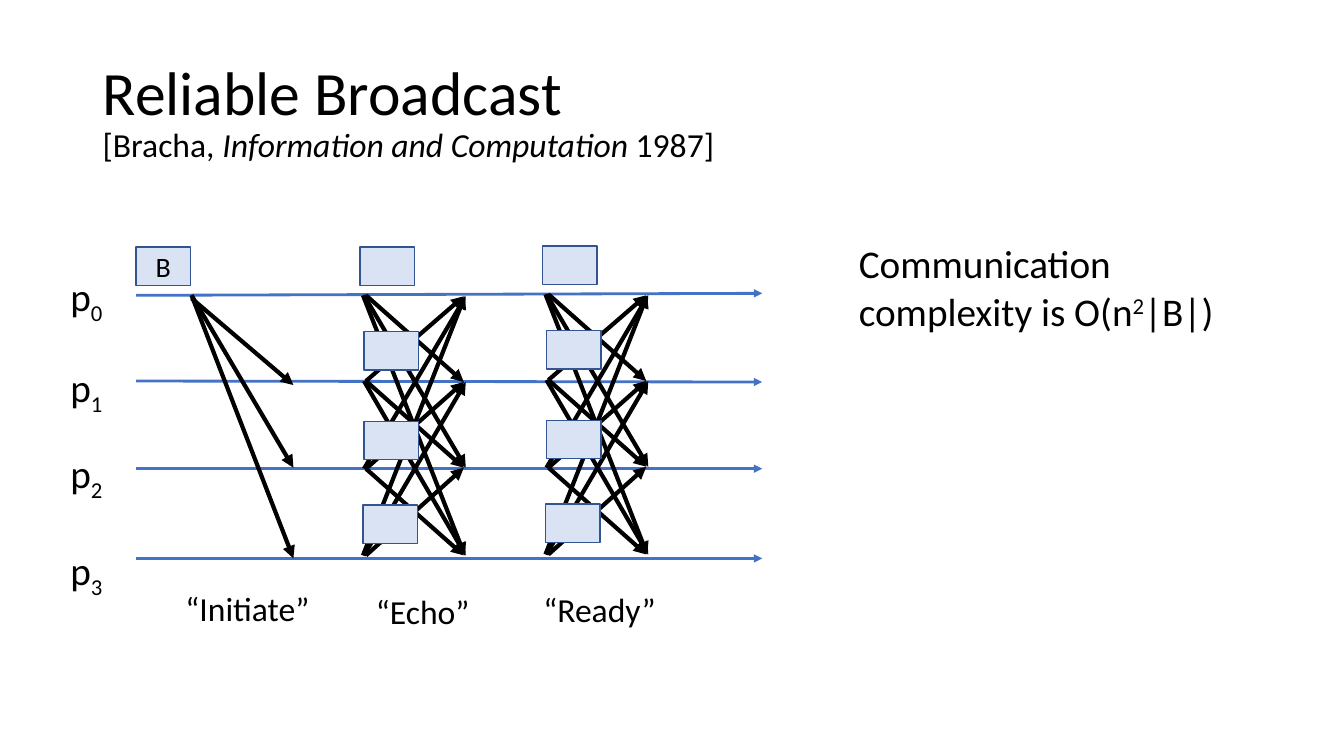
from lxml.etree import SubElement
from pptx import Presentation
from pptx.dml.color import RGBColor
from pptx.enum.shapes import MSO_CONNECTOR, MSO_SHAPE
from pptx.enum.text import MSO_ANCHOR, PP_ALIGN
from pptx.oxml.ns import qn
from pptx.util import Inches, Pt

HUES = {"ink": "000000", "axis": "4472C4", "fill": "DAE3F3", "edge": "325491"}
FONT = "Calibri"
STARTS = [2.93, 3.78, 4.65, 5.51]
ENDS = [2.94, 3.79, 4.64, 5.51]


def color(name):
    """Return the named colour."""
    return RGBColor.from_string(HUES[name])


def write(shape, runs, size, wrap=False, anchor=MSO_ANCHOR.TOP,
          align=PP_ALIGN.LEFT, space=None):
    """Fill a shape with runs, each a string and its own format."""
    frame = shape.text_frame
    frame.word_wrap = wrap
    frame.vertical_anchor = anchor
    par = frame.paragraphs[0]
    par.alignment = align
    par.line_spacing = space
    for words, form in runs:
        if words == "\n":
            par.add_line_break()
            continue
        run = par.add_run()
        run.text = words
        run.font.name = FONT
        run.font.size = Pt(form.get("size", size))
        run.font.italic = form.get("italic")
        run.font.color.rgb = color("ink")
        if "base" in form:
            run._r.get_or_add_rPr().set("baseline", str(form["base"] * 1000))


def label(slide, box, runs, size, **form):
    """Add a text box at the given left, top, width and height."""
    shape = slide.shapes.add_textbox(*map(Inches, box))
    write(shape, runs, size, **form)


def arrow(slide, start, end, hue="ink", width=3):
    """Draw a straight arrow between two points."""
    line = slide.shapes.add_connector(
        MSO_CONNECTOR.STRAIGHT, *map(Inches, (*start, *end)))
    line.line.color.rgb = color(hue)
    line.line.width = Pt(width)
    SubElement(line.line._get_or_add_ln(), qn("a:tailEnd"), type="triangle")
    SubElement(line._element.spPr, qn("a:effectLst"))


def block(slide, left, top, words=""):
    """Draw one message block."""
    shape = slide.shapes.add_shape(
        MSO_SHAPE.RECTANGLE, *map(Inches, (left, top, 0.54, 0.38)))
    shape.shadow.inherit = False
    shape.fill.solid()
    shape.fill.fore_color.rgb = color("fill")
    shape.line.color.rgb = color("edge")
    shape.line.width = Pt(1)
    if words:
        write(shape, [(words, {})], 20, anchor=MSO_ANCHOR.MIDDLE,
              align=PP_ALIGN.CENTER)


def heading(slide, box):
    """Place the title and its citation."""
    runs = [("Reliable Broadcast", {"size": 44}), ("\n", {}), ("[Bracha, ", {}),
            ("Information and Computation ", {"italic": True}), ("1987]", {})]
    label(slide, box, runs, 24, wrap=True, anchor=MSO_ANCHOR.MIDDLE, space=0.9)


def lanes(slide, left, right):
    """Draw the time line and name of each process."""
    rows = [(2.93, 2.91, 2.65), (3.78, 3.79, 3.56),
            (4.65, 4.65, 4.41), (5.54, 5.54, 5.37)]
    for num, (start, end, top) in enumerate(rows):
        arrow(slide, (left, start), (right, end), "axis", 2)
        label(slide, (left - 0.75, top, 0.54, 0.57),
              [("p", {}), (str(num), {"base": -25})], 28)


def initiate(slide, left):
    """Draw the first round, where one process sends to the rest."""
    block(slide, left, 2.45, "B")
    for start, end in [(2.93, 5.54), (2.93, 4.64), (2.96, 3.82)]:
        arrow(slide, (left + 0.55, start), (left + 1.56, end))
    label(slide, (left + 0.39, 5.78, 1.45, 0.5), [("“Initiate”", {})], 24)


def exchange(slide, left, rise, words, box):
    """Draw a round where every process sends to every other."""
    spans = {1: (0.03, 1), 2: (0.01, 1.02), 3: (0, 1.01)}
    for row, start in enumerate(STARTS):
        for goal, end in enumerate(ENDS):
            if row != goal:
                tail, head = spans[abs(row - goal)]
                arrow(slide, (left + tail, start - rise),
                      (left + head, end - rise))
    for shift, top in [(0.01, 3.29), (0.01, 4.18), (0, 5.01), (-0.03, 2.45)]:
        block(slide, left + shift, top - rise)
    label(slide, box, [(words, {})], 24)


def claim(slide, box):
    """State the cost of the protocol."""
    runs = [("Communication complexity is O(n", {}), ("2", {"base": 30}),
            ("|B|)", {})]
    label(slide, box, runs, 28, wrap=True)


def main():
    """Build and save the slide."""
    deck = Presentation()
    deck.slide_width, deck.slide_height = Inches(13.33), Inches(7.5)
    slide = deck.slides.add_slide(deck.slide_layouts[6])
    heading(slide, (0.92, 0.4, 11.5, 1.45))
    lanes(slide, 1.35, 7.56)
    initiate(slide, 1.35)
    exchange(slide, 3.6, 0, "“Echo”", (3.63, 5.81, 1.14, 0.5))
    exchange(slide, 5.41, 0.01, "“Ready”", (5.29, 5.79, 1.33, 0.5))
    claim(slide, (8.42, 2.33, 4.42, 1.04))
    deck.save("out.pptx")


if __name__ == "__main__":
    main()
